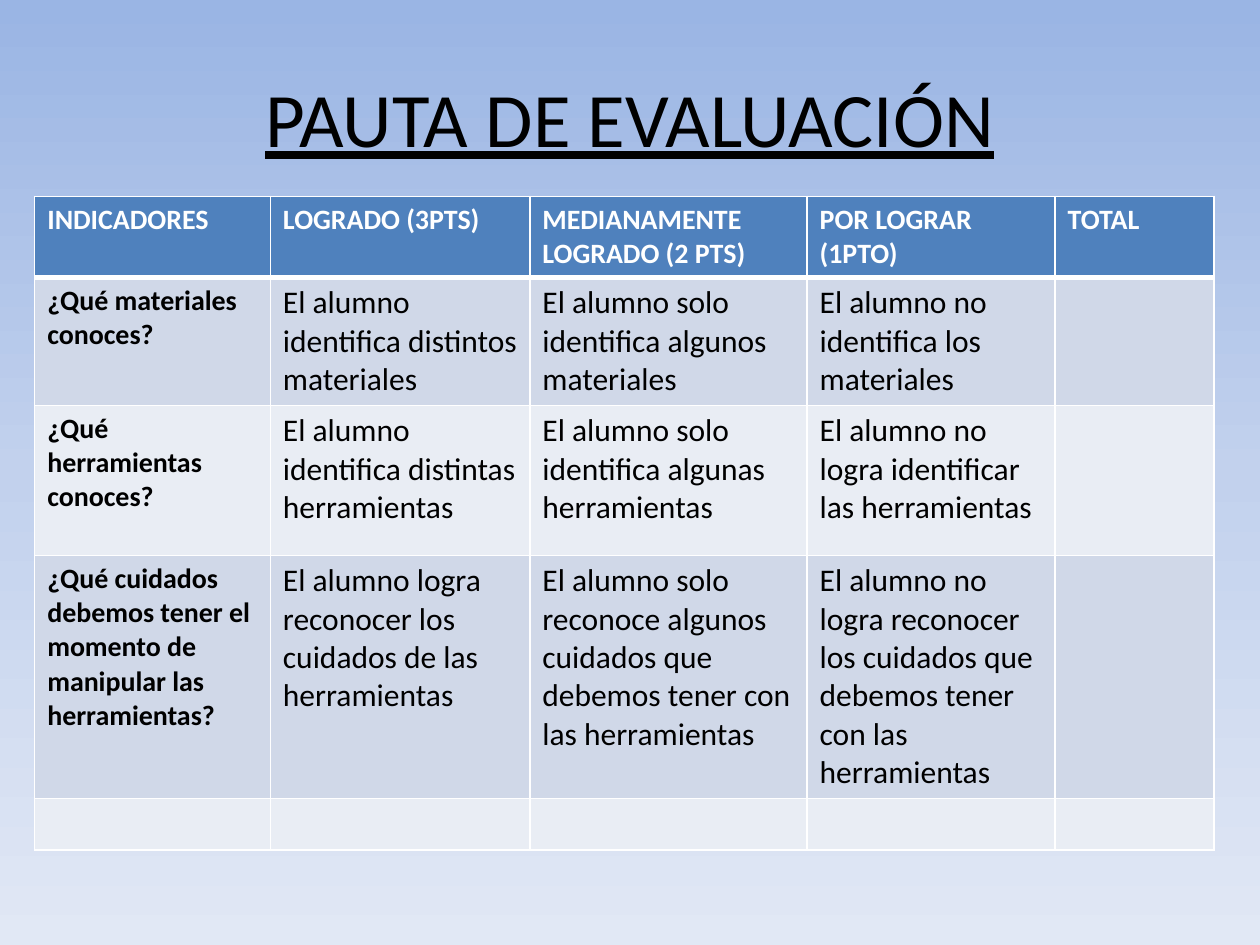
import copy

import lxml.etree
import pptx
import pptx.dml.color
import pptx.enum.text
import pptx.oxml.ns
import pptx.util
from pptx.util import Cm

FONT = "Calibri"
BLACK, WHITE = "000000", "FFFFFF"
HEADER_FILL = "4F81BD"
BAND_FILLS = ["E9EDF4", "D0D8E8"]
BACKGROUND_STOPS = [(0, "9AB5E4"), (0.5, "C2D1ED"), (1, "E1E8F5")]
COLUMN_WIDTHS = [4.75, 5.23, 5.59, 5, 3.2]
ROW_HEIGHTS = [1.63, 2.57, 3.02, 4.9, 1.03]
RUBRIC = [
    ["INDICADORES", "LOGRADO (3PTS)", "MEDIANAMENTE LOGRADO (2 PTS)",
     "POR LOGRAR (1PTO)", "TOTAL"],
    ["¿Qué materiales conoces?",
     "El alumno identifica distintos materiales",
     "El alumno solo identifica algunos materiales",
     "El alumno no identifica los materiales", ""],
    ["¿Qué herramientas conoces?",
     "El alumno identifica distintas herramientas",
     "El alumno solo identifica algunas herramientas",
     "El alumno no logra identificar las herramientas", ""],
    ["¿Qué cuidados debemos tener el momento de manipular las herramientas?",
     "El alumno logra reconocer los cuidados de las herramientas",
     "El alumno solo reconoce algunos cuidados que debemos tener con las herramientas",
     "El alumno no logra reconocer los cuidados que debemos tener con las herramientas",
     ""],
    [""] * 5,
]


def rgb(value):
    return pptx.dml.color.RGBColor.from_string(value)


def format_font(font, size, color, bold=False):
    font.name = FONT
    font.size = pptx.util.Pt(size)
    font.bold = bold
    font.color.rgb = rgb(color)


def paint_background(slide):
    fill = slide.background.fill
    fill.gradient()
    fill.gradient_angle = 270
    first_stop = next(slide.element.iter(pptx.oxml.ns.qn("a:gs")))
    first_stop.addnext(copy.deepcopy(first_stop))
    for stop, (position, color) in zip(fill.gradient_stops, BACKGROUND_STOPS):
        stop.position = position
        stop.color.rgb = rgb(color)


def write_title(slide, text):
    title = slide.shapes.title
    title.left, title.top = Cm(1.27), Cm(0.76)
    title.width, title.height = Cm(22.86), Cm(3.18)
    frame = title.text_frame
    frame.text = text
    frame.vertical_anchor = pptx.enum.text.MSO_ANCHOR.MIDDLE
    paragraph = frame.paragraphs[0]
    paragraph.alignment = pptx.enum.text.PP_ALIGN.CENTER
    run = paragraph.runs[0]
    format_font(run.font, 44, BLACK)
    run.font.underline = True


def add_borders(cell, top, bottom):
    qn = pptx.oxml.ns.qn
    properties = cell._tc.get_or_add_tcPr()
    for side, width in (("L", 1), ("R", 1), ("T", top), ("B", bottom)):
        line = lxml.etree.SubElement(
            properties, qn(f"a:ln{side}"), w=str(pptx.util.Pt(width)))
        solid = lxml.etree.SubElement(line, qn("a:solidFill"))
        lxml.etree.SubElement(solid, qn("a:srgbClr"), val=WHITE)


def fill_cell(cell, text, row, column):
    header = row == 0
    label = header or column == 0
    add_borders(cell, 3 if row == 1 else 1, 3 if header else 1)
    cell.fill.solid()
    cell.fill.fore_color.rgb = rgb(HEADER_FILL if header else BAND_FILLS[row % 2])
    if text:
        cell.text_frame.text = text
        format_font(cell.text_frame.paragraphs[0].runs[0].font,
                    16 if label else 18, WHITE if header else BLACK, label)


def add_rubric(slide):
    table = slide.shapes.add_table(
        len(ROW_HEIGHTS), len(COLUMN_WIDTHS), Cm(0.7), Cm(3.96),
        Cm(sum(COLUMN_WIDTHS)), Cm(sum(ROW_HEIGHTS))).table
    for column, width in zip(table.columns, COLUMN_WIDTHS):
        column.width = Cm(width)
    for row, height in zip(table.rows, ROW_HEIGHTS):
        row.height = Cm(height)
    for row, texts in enumerate(RUBRIC):
        for column, text in enumerate(texts):
            fill_cell(table.cell(row, column), text, row, column)


def main():
    presentation = pptx.Presentation()
    presentation.slide_width, presentation.slide_height = Cm(25.4), Cm(19.05)
    slide = presentation.slides.add_slide(presentation.slide_layouts[5])
    paint_background(slide)
    write_title(slide, "PAUTA DE EVALUACIÓN")
    add_rubric(slide)
    presentation.save("out.pptx")


if __name__ == "__main__":
    main()
